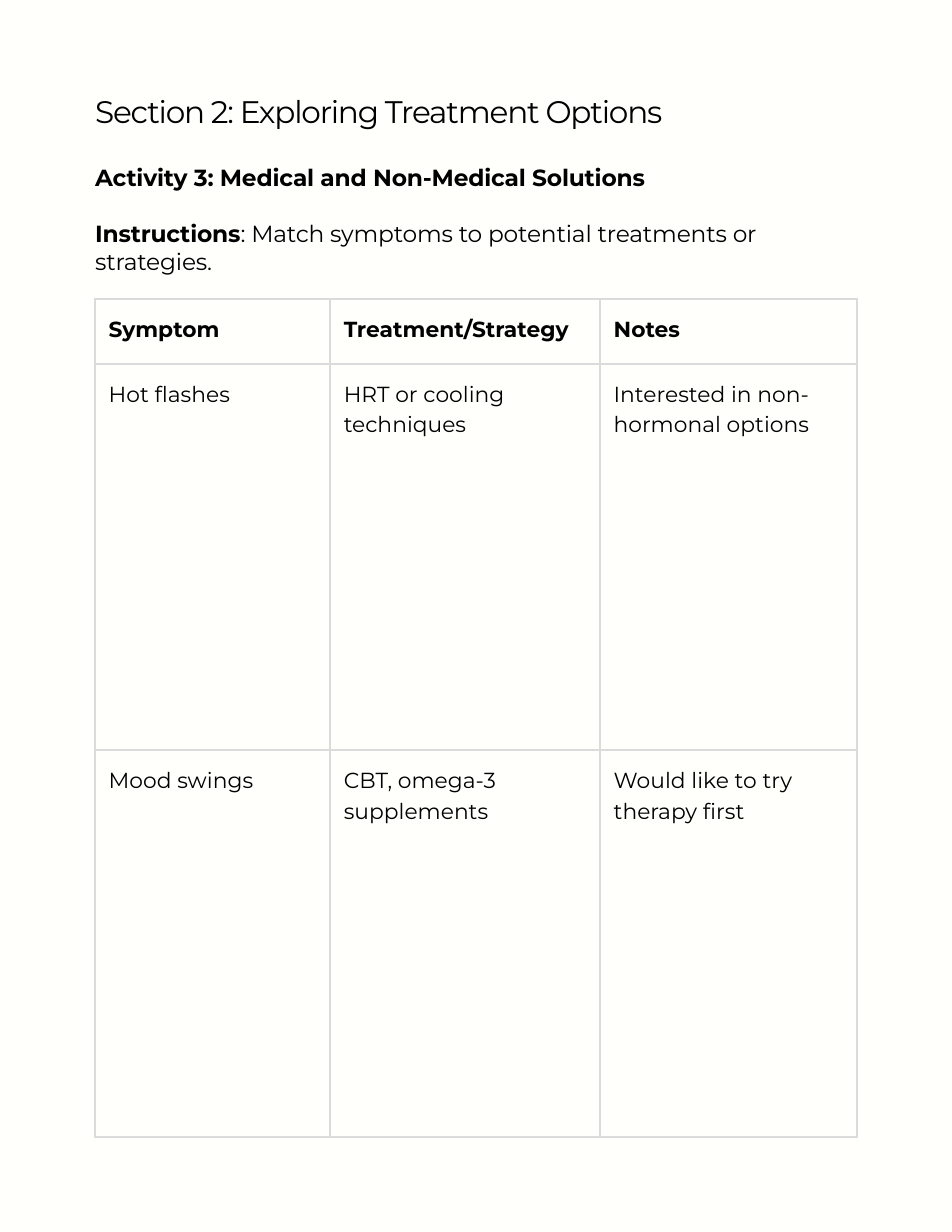
"""Build a worksheet page that matches symptoms to treatments."""
from lxml import etree
from pptx import Presentation
from pptx.dml.color import RGBColor
from pptx.enum.text import MSO_ANCHOR, MSO_AUTO_SIZE, PP_ALIGN
from pptx.oxml.ns import qn
from pptx.util import Pt

TOP = MSO_ANCHOR.TOP
FIXED = MSO_AUTO_SIZE.NONE
LEFT = PP_ALIGN.LEFT
INK = RGBColor(0x00, 0x00, 0x00)
PAPER = RGBColor(0xFF, 0xFF, 0xFC)
RULE = RGBColor(0xDB, 0xDB, 0xDB)
EDGE = 61.2
WIDTH = 489.6
COLS = (151.2, 173.52, 164.88)
ROWS = (41.76, 248.4, 248.4)
DATA = (
    ("Symptom", "Treatment/Strategy", "Notes"),
    ("Hot flashes", "HRT or cooling techniques", "Interested in non-hormonal options"),
    ("Mood swings", "CBT, omega-3 supplements", "Would like to try therapy first"),
)


class Page:
    def __init__(self, deck, font="Montserrat"):
        self.font = font
        self.slide = deck.slides.add_slide(deck.slide_layouts[1])
        fill = self.slide.background.fill
        fill.solid()
        fill.fore_color.rgb = PAPER

    def style(self, para, size, lead, bold=False, track=0):
        para.alignment = LEFT
        para.line_spacing = Pt(lead)
        para.space_before = para.space_after = Pt(0)
        for run in para.runs:
            font = run.font
            font.name, font.size, font.bold = self.font, Pt(size), bold
            font.color.rgb = INK
            if track:
                run._r.get_or_add_rPr().set("spc", str(track))

    def place(self, shape, top, high):
        shape.left, shape.top = Pt(EDGE), Pt(top)
        shape.width, shape.height = Pt(WIDTH), Pt(high)
        frame = shape.text_frame
        frame.margin_left = frame.margin_right = Pt(0)
        frame.margin_top = frame.margin_bottom = Pt(0)
        frame.vertical_anchor = TOP
        frame.auto_size = FIXED
        frame.word_wrap = True
        return frame

    def title(self, text, top, high):
        frame = self.place(self.slide.shapes.title, top, high)
        frame.text = text
        self.style(frame.paragraphs[0], 20, 18, track=-80)

    def body(self, head, label, text, top, high):
        frame = self.place(self.slide.placeholders[1], top, high)
        frame.text = f"{head}\n{label}"
        frame.paragraphs[1].add_run().text = text
        for para in frame.paragraphs:
            self.style(para, 15, 18, True, -10)
            props = para._p.get_or_add_pPr()
            props.set("marL", "0")
            props.set("indent", "0")
            etree.SubElement(props, qn("a:buNone"))
        last = frame.paragraphs[1]
        last.space_before = Pt(18)
        last.runs[1].font.bold = False

    def border(self, cell):
        props = cell._tc.get_or_add_tcPr()
        for side in "LRTB":
            line = etree.SubElement(props, qn(f"a:ln{side}"), w=str(Pt(1.5)))
            fill = etree.SubElement(line, qn("a:solidFill"))
            etree.SubElement(fill, qn("a:srgbClr"), val=str(RULE))

    def table(self, data, top):
        grid = self.slide.shapes.add_table(
            len(ROWS), len(COLS), Pt(EDGE), Pt(top), Pt(WIDTH), Pt(sum(ROWS))
        ).table
        grid.first_row = grid.horz_banding = False
        for col, wide in zip(grid.columns, COLS):
            col.width = Pt(wide)
        for i, (row, high) in enumerate(zip(grid.rows, ROWS)):
            row.height = Pt(high)
            for cell, text in zip(row.cells, data[i]):
                cell.margin_left = cell.margin_right = Pt(8.64)
                cell.margin_top = cell.margin_bottom = Pt(8.64)
                cell.vertical_anchor = TOP
                cell.text_frame.text = text
                self.style(cell.text_frame.paragraphs[0], 14, 19.6, i == 0)
                self.border(cell)
                cell.fill.background()


def main():
    deck = Presentation()
    deck.slide_width, deck.slide_height = Pt(612), Pt(792)
    page = Page(deck)
    page.title("Section 2: Exploring Treatment Options", 65.52, 19.44)
    page.body(
        "Activity 3: Medical and Non-Medical Solutions",
        "Instructions",
        ": Match symptoms to potential treatments or strategies.",
        105.12,
        66.96,
    )
    page.table(DATA, 192.24)
    deck.save("out.pptx")


if __name__ == "__main__":
    main()
